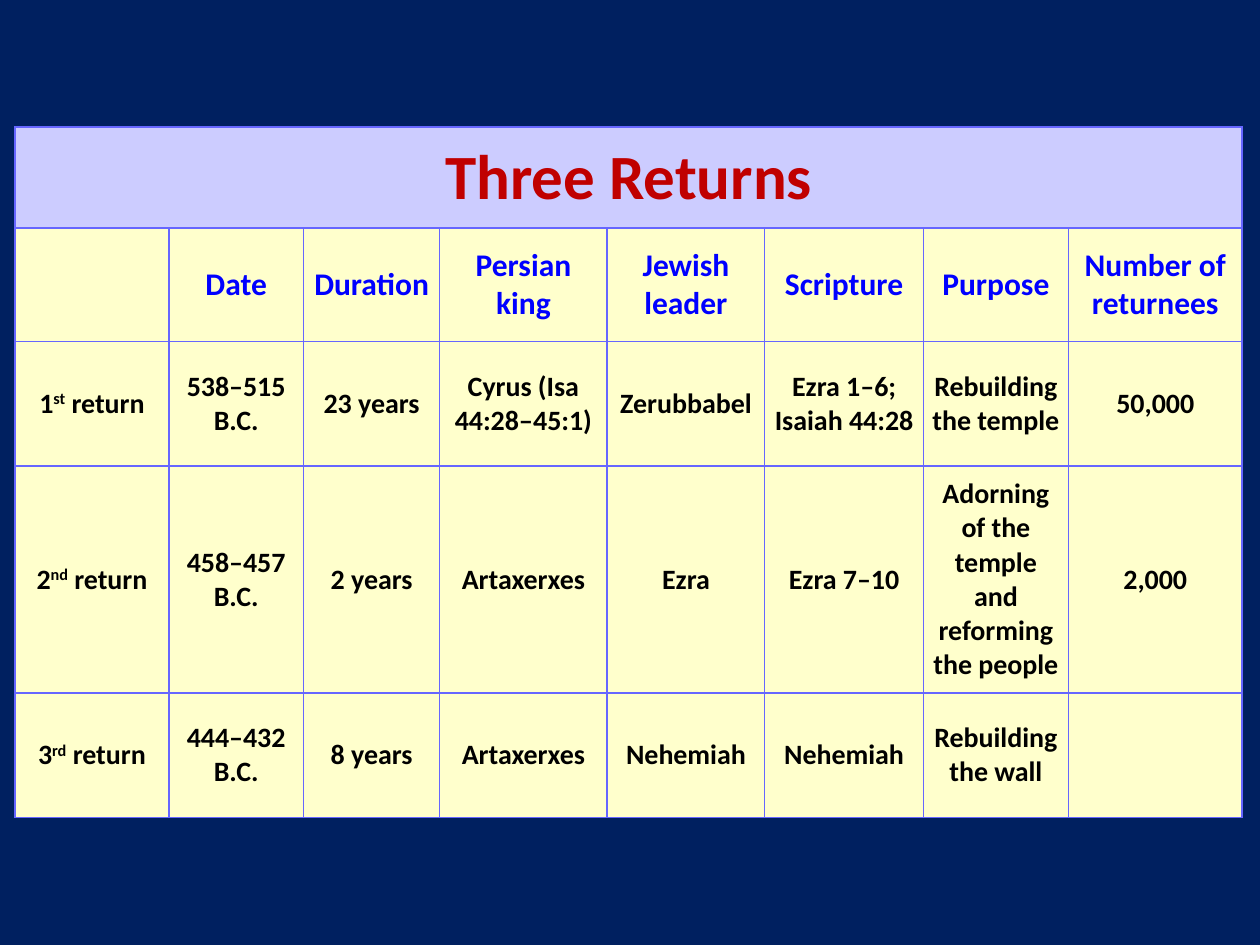
"""Builds a slide with a table of the three returns from exile."""
from dataclasses import dataclass

from lxml.etree import SubElement
from pptx import Presentation
from pptx.dml.color import RGBColor as RGB
from pptx.enum.text import MSO_ANCHOR as ANCHOR, PP_ALIGN as ALIGN
from pptx.oxml.ns import qn
from pptx.util import Inches, Pt


@dataclass(frozen=True)
class Theme:
    font: str = "Calibri"
    background: str = "002060"
    border: str = "6666FF"
    title_fill: str = "CCCCFF"
    cell_fill: str = "FFFFCC"
    title_color: str = "C00000"
    header_color: str = "0000FF"
    body_color: str = "000000"
    title_size: int = 36
    header_size: int = 18
    body_size: int = 16
    border_width: int = 1


TITLE = "Three Returns"
HEADERS = ["", "Date", "Duration", "Persian king", "Jewish leader",
           "Scripture", "Purpose", "Number of returnees"]
RETURNS = [
    ["1^st^ return", "538–515 B.C.", "23 years", "Cyrus (Isa 44:28‒45:1)",
     "Zerubbabel", "Ezra 1–6; Isaiah 44:28", "Rebuilding the temple", "50,000"],
    ["2^nd^ return", "458–457 B.C.", "2 years", "Artaxerxes", "Ezra", "Ezra 7–10",
     "Adorning of the temple and reforming the people", "2,000"],
    ["3^rd^ return", "444–432 B.C.", "8 years", "Artaxerxes", "Nehemiah",
     "Nehemiah", "Rebuilding the wall", ""],
]
COL_WIDTHS = [1.22, 1.07, 1.08, 1.33, 1.25, 1.26, 1.15, 1.38]
ROW_HEIGHTS = [0.8, 0.9, 0.99, 1.8, 0.99]


class SlideBuilder:
    def __init__(self, prs, theme):
        self.theme = theme
        self.slide = prs.slides.add_slide(prs.slide_layouts[6])
        fill = self.slide.background.fill
        fill.solid()
        fill.fore_color.rgb = RGB.from_string(theme.background)

    def borders(self, cell):
        tcPr = cell._tc.get_or_add_tcPr()
        for side in ("lnL", "lnR", "lnT", "lnB"):
            ln = SubElement(tcPr, qn(f"a:{side}"), w=str(Pt(self.theme.border_width)))
            fill = SubElement(ln, qn("a:solidFill"))
            SubElement(fill, qn("a:srgbClr"), val=self.theme.border)

    def text(self, cell, text, size, color):
        p = cell.text_frame.paragraphs[0]
        p.alignment = ALIGN.CENTER
        p.font.name, p.font.size, p.font.bold = self.theme.font, Pt(size), True
        p.font.color.rgb = RGB.from_string(color)
        for i, part in enumerate(text.split("^")):
            r = p.add_run()
            r.text = part
            if i % 2:
                r._r.get_or_add_rPr().set("baseline", "30000")

    def cell(self, cell, text, size, color, fill):
        cell.vertical_anchor = ANCHOR.MIDDLE
        cell.margin_left = cell.margin_right = Inches(0.07)
        cell.margin_top = cell.margin_bottom = 0
        self.borders(cell)
        cell.fill.solid()
        cell.fill.fore_color.rgb = RGB.from_string(fill)
        if text:
            self.text(cell, text, size, color)

    def table(self, left, top, title, headers, body):
        t = self.theme
        rows = [[title] + [""] * (len(headers) - 1), headers, *body]
        styles = [(t.title_size, t.title_color, t.title_fill),
                  (t.header_size, t.header_color, t.cell_fill)]
        styles += [(t.body_size, t.body_color, t.cell_fill)] * len(body)
        table = self.slide.shapes.add_table(
            len(rows), len(headers), Inches(left), Inches(top),
            Inches(sum(COL_WIDTHS)), Inches(sum(ROW_HEIGHTS))).table
        for col, width in zip(table.columns, COL_WIDTHS):
            col.width = Inches(width)
        for row, height, texts, style in zip(table.rows, ROW_HEIGHTS, rows, styles):
            row.height = Inches(height)
            for cell, text in zip(row.cells, texts):
                self.cell(cell, text, *style)
        table.cell(0, 0).merge(table.cell(0, len(headers) - 1))


def main():
    prs = Presentation()
    prs.slide_width, prs.slide_height = Inches(10), Inches(7.5)
    SlideBuilder(prs, Theme()).table(0.12, 1.01, TITLE, HEADERS, RETURNS)
    prs.save("out.pptx")


if __name__ == "__main__":
    main()
